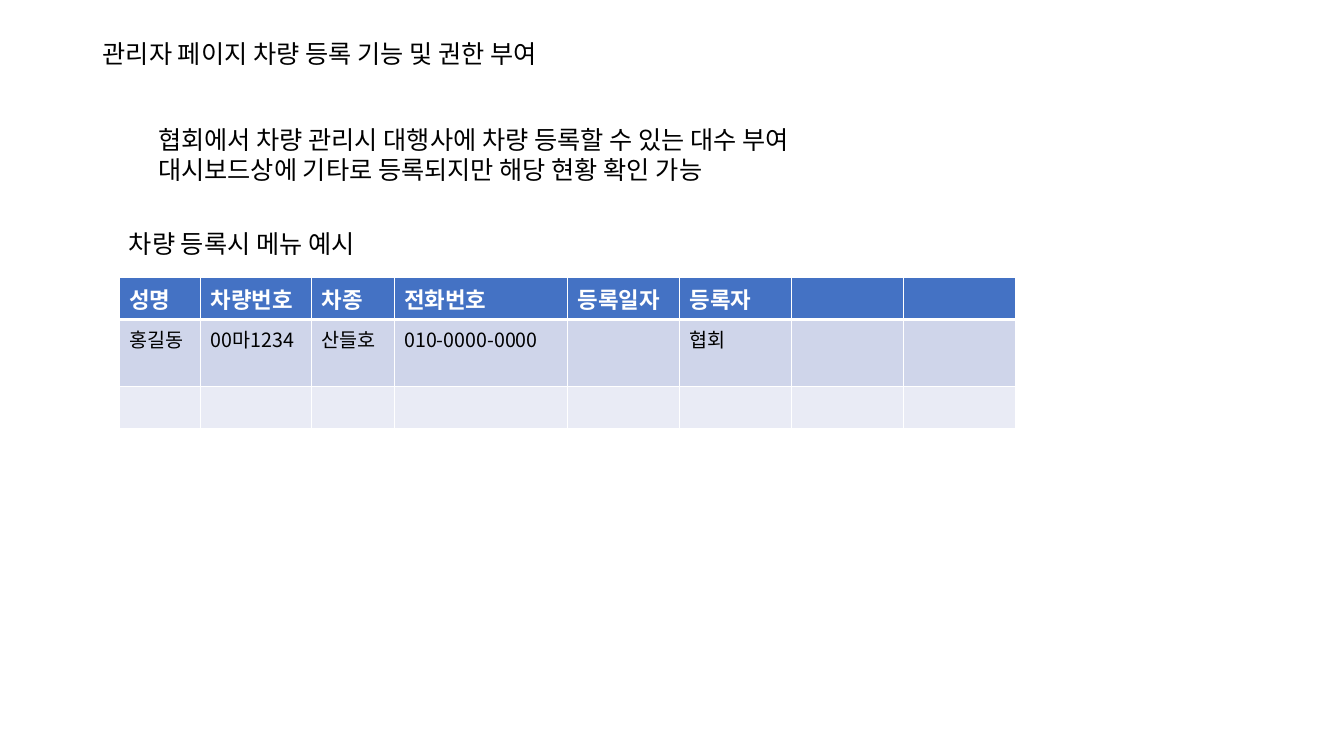
from lxml import etree
from pptx import Presentation
from pptx.dml.color import RGBColor
from pptx.enum.text import MSO_AUTO_SIZE
from pptx.oxml.ns import qn
from pptx.util import Inches, Pt

FIT = MSO_AUTO_SIZE.SHAPE_TO_FIT_TEXT
FACE = "Noto Sans CJK KR"
WHITE = RGBColor(0xFF, 0xFF, 0xFF)
BLACK = RGBColor(0x00, 0x00, 0x00)
BLUE = RGBColor(0x44, 0x72, 0xC4)
BAND = RGBColor(0xCF, 0xD5, 0xEA)
PALE = RGBColor(0xE9, 0xEB, 0xF5)

NOTES = [
    ((0.92, 0.33, 5.12, 0.4), ["관리자 페이지 차량 등록 기능 및 권한 부여"]),
    ((1.47, 1.18, 7.32, 0.71), [
        "협회에서 차량 관리시 대행사에 차량 등록할 수 있는 대수 부여",
        "대시보드상에 기타로 등록되지만 해당 현황 확인 가능",
    ]),
    ((1.18, 2.22, 2.74, 0.4), ["차량 등록시 메뉴 예시"]),
]
CARS = [
    ["성명", "차량번호", "차종", "전화번호", "등록일자", "등록자", "", ""],
    ["홍길동", "00마1234", "산들호", "010-0000-0000", "", "협회", "", ""],
    [""] * 8,
]
STYLES = [(BLUE, 16, WHITE, True), (BAND, 14, BLACK, False), (PALE, 14, BLACK, False)]
WIDTHS = [0.81, 1.1, 0.82, 1.72] + [1.11] * 4
LEFT, TOP, HIGH = 1.18, 2.75, 0.41


def style(para, size, color, bold=False):
    font = para.font
    font.size, font.bold, font.name = Pt(size), bold, FACE
    font.color.rgb = color
    latin = para._p.pPr.find(qn("a:defRPr")).find(qn("a:latin"))
    asian = etree.Element(qn("a:ea"), typeface=FACE)
    latin.addnext(asian)


def edge(cell, row):
    props = cell._tc.get_or_add_tcPr()
    sides = {"L": 1, "R": 1, "T": 3 if row == 1 else 1, "B": 3 if row == 0 else 1}
    for side, width in sides.items():
        line = etree.SubElement(props, qn("a:ln" + side), w=str(Pt(width)))
        fill = etree.SubElement(line, qn("a:solidFill"))
        etree.SubElement(fill, qn("a:srgbClr"), val=str(WHITE))


def add_cars(slide):
    frame = slide.shapes.add_table(
        len(CARS), len(WIDTHS), Inches(LEFT), Inches(TOP),
        Inches(sum(WIDTHS)), Inches(HIGH * len(CARS)))
    table = frame.table
    for col, width in zip(table.columns, WIDTHS):
        col.width = Inches(width)
    for row, (words, (fill, size, color, bold)) in enumerate(zip(CARS, STYLES)):
        table.rows[row].height = Inches(HIGH)
        for col, word in enumerate(words):
            cell = table.cell(row, col)
            edge(cell, row)
            cell.fill.solid()
            cell.fill.fore_color.rgb = fill
            if word:
                cell.text = word
                style(cell.text_frame.paragraphs[0], size, color, bold)


def add_note(slide, place, lines):
    frame = slide.shapes.add_textbox(*map(Inches, place)).text_frame
    frame.word_wrap = False
    frame.auto_size = FIT
    frame.text = "\n".join(lines)
    for para in frame.paragraphs:
        style(para, 18, BLACK)


def main():
    deck = Presentation()
    deck.slide_width, deck.slide_height = Inches(13.33), Inches(7.5)
    slide = deck.slides.add_slide(deck.slide_layouts[6])
    add_cars(slide)
    for place, lines in NOTES:
        add_note(slide, place, lines)
    deck.save("out.pptx")


if __name__ == "__main__":
    main()
